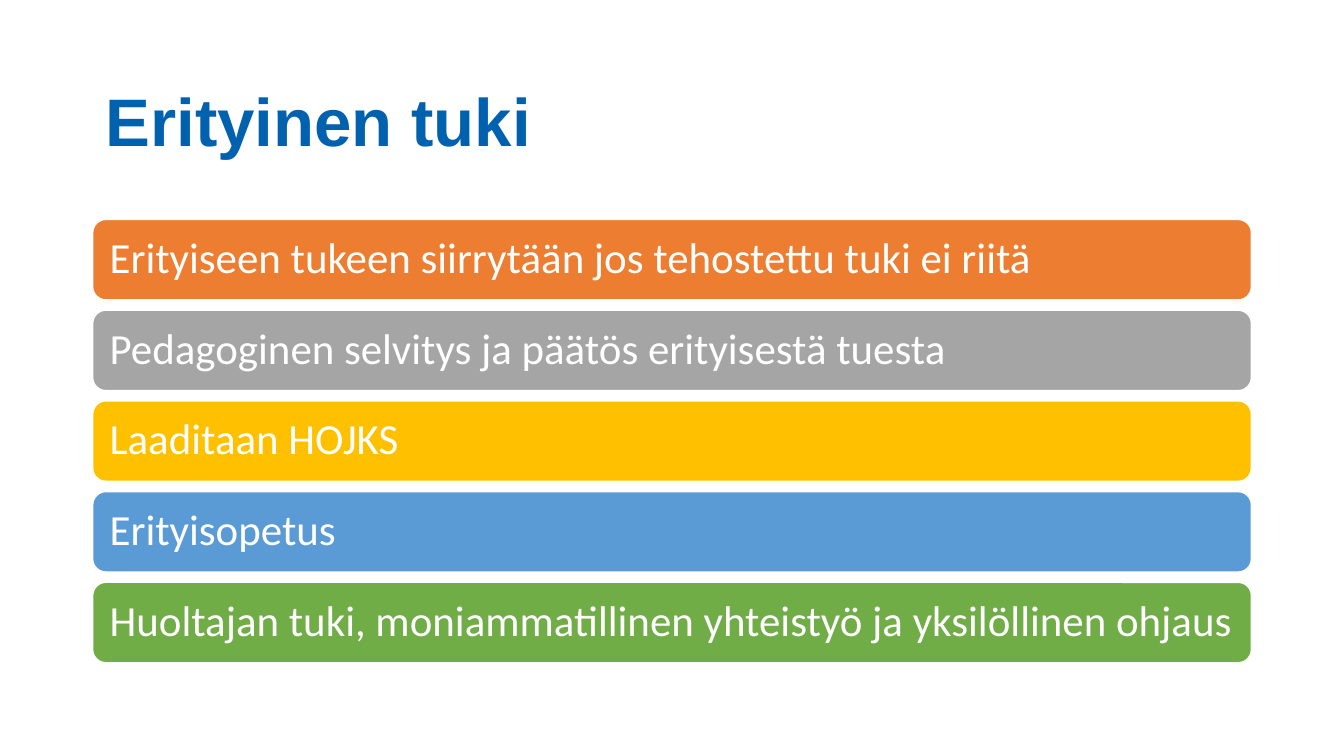
from pptx import Presentation
from pptx.dml.color import RGBColor as Rgb
from pptx.enum.shapes import MSO_SHAPE as Kind
from pptx.enum.text import MSO_ANCHOR as Anchor, PP_ALIGN as Align
from pptx.util import Inches, Pt

LEFT, WIDE = 6.88, 86.25
TOP, STEP, HIGH = 29, 12, 10.7
BARS = [
    ("Erityiseen tukeen siirrytään jos tehostettu tuki ei riitä", "ED7D31"),
    ("Pedagoginen selvitys ja päätös erityisestä tuesta", "A5A5A5"),
    ("Laaditaan HOJKS", "FFC000"),
    ("Erityisopetus", "5B9BD5"),
    ("Huoltajan tuki, moniammatillinen yhteistyö ja yksilöllinen ohjaus", "70AD47"),
]


def tint(code):
    return Rgb.from_string(code)


def write(frame, text, size=23, face="Calibri", color="FFFFFF", bold=False, pad=0.1):
    frame.word_wrap = True
    frame.vertical_anchor = Anchor.MIDDLE
    frame.margin_left = Inches(0.1)
    frame.margin_right = Inches(0.05)
    frame.margin_top = frame.margin_bottom = Inches(pad)
    para = frame.paragraphs[0]
    para.alignment = Align.LEFT
    para.line_spacing = 0.9
    run = para.add_run()
    run.text = text
    font = run.font
    font.name, font.size, font.bold = face, Pt(size), bold
    font.color.rgb = tint(color)


class Deck:
    ink = "0062AE"
    edge = "FFFFFF"

    def __init__(self):
        self.show = Presentation()
        self.show.slide_width = Inches(10)
        self.show.slide_height = Inches(10) * 9 // 16
        self.slide = self.show.slides.add_slide(self.show.slide_layouts[6])

    def place(self, left, top, wide, high):
        across, down = self.show.slide_width / 100, self.show.slide_height / 100
        return [int(v) for v in (left * across, top * down, wide * across, high * down)]

    def title(self, text, *area):
        box = self.slide.shapes.add_textbox(*self.place(*area))
        write(box.text_frame, text, size=36, face="Arial", color=self.ink, bold=True, pad=0.05)

    def bar(self, text, fill, *area):
        shape = self.slide.shapes.add_shape(Kind.ROUNDED_RECTANGLE, *self.place(*area))
        shape.shadow.inherit = False
        shape.fill.solid()
        shape.fill.fore_color.rgb = tint(fill)
        shape.line.color.rgb = tint(self.edge)
        shape.line.width = Pt(1)
        write(shape.text_frame, text)


def main():
    deck = Deck()
    deck.title("Erityinen tuki", LEFT, 8.2, WIDE, 16.5)
    for row, (text, fill) in enumerate(BARS):
        deck.bar(text, fill, LEFT, TOP + row * STEP, WIDE, HIGH)
    deck.show.save("out.pptx")


if __name__ == "__main__":
    main()
